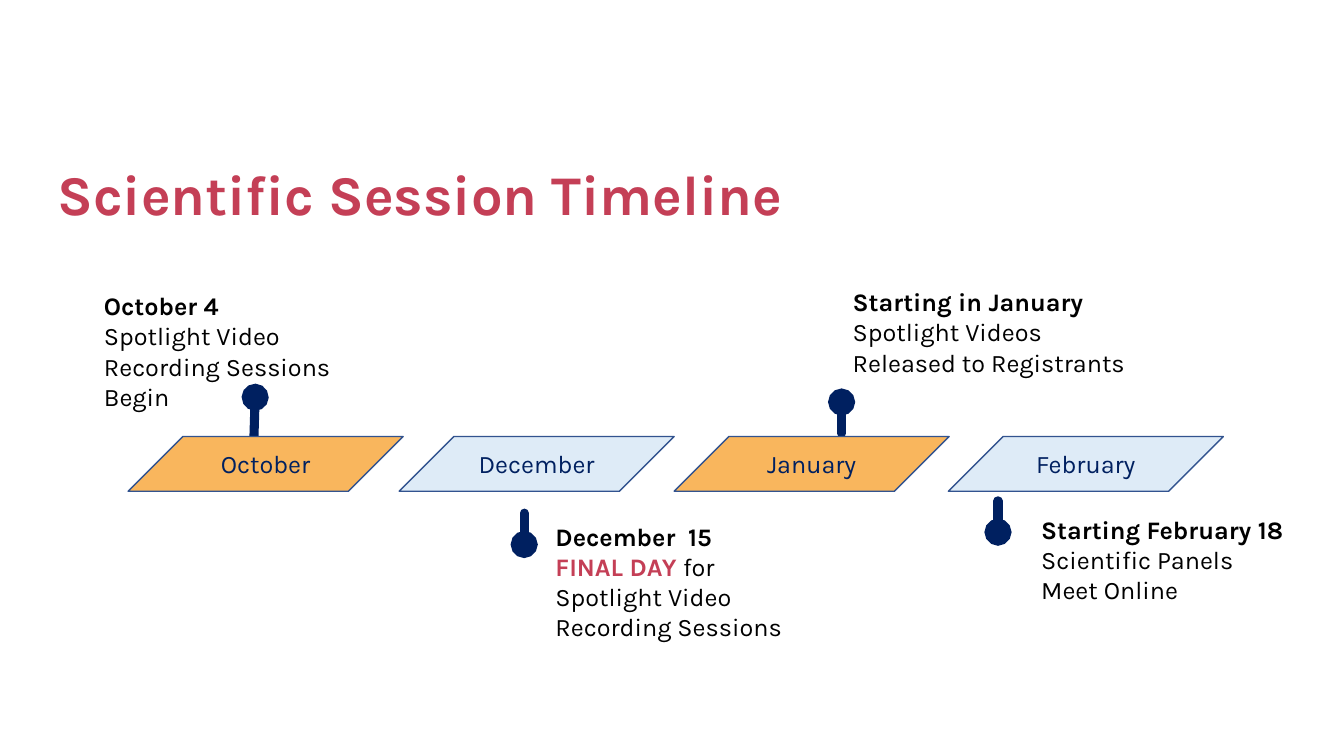
from dataclasses import dataclass

from lxml import etree
from pptx import Presentation
from pptx.dml.color import RGBColor
from pptx.enum.shapes import MSO_CONNECTOR, MSO_SHAPE
from pptx.enum.text import MSO_ANCHOR, MSO_AUTO_SIZE, PP_ALIGN
from pptx.oxml.ns import qn
from pptx.util import Cm, Pt

PARALLELOGRAM = MSO_SHAPE.PARALLELOGRAM
STRAIGHT = MSO_CONNECTOR.STRAIGHT
TOP, MIDDLE = MSO_ANCHOR.TOP, MSO_ANCHOR.MIDDLE
LEFT, CENTER = PP_ALIGN.LEFT, PP_ALIGN.CENTER
GROW, FIXED = MSO_AUTO_SIZE.SHAPE_TO_FIT_TEXT, MSO_AUTO_SIZE.NONE


@dataclass(frozen=True)
class Theme:
    font: str = "Karla"
    title_size: int = 40
    body_size: int = 18
    red: str = "C43F56"
    navy: str = "002060"
    black: str = "000000"
    orange: str = "F9B65D"
    pale_blue: str = "DEEBF7"
    edge: str = "32538F"


@dataclass(frozen=True)
class Milestone:
    """Pin and note places are offsets in cm from the step's top left corner."""
    month: str
    left: float
    fill: str
    pin_start: tuple
    pin_head: tuple
    note_at: tuple
    note_size: tuple
    date: str
    details: tuple
    emphasis: str = ""


THEME = Theme()
STEP_TOP, STEP_WIDTH, STEP_HEIGHT = 11, 6.93, 1.38
MILESTONES = (
    Milestone("October", 3.23, THEME.orange, (3.17, 0), (3.2, -0.99),
              (-0.74, -3.81), (7.54, 3.33), "October 4",
              ("Spotlight Video Recording Sessions Begin",)),
    Milestone("December", 10.06, THEME.pale_blue, (3.15, 1.93), (3.15, 2.72),
              (3.81, 2), (6.93, 3.33), "December  15",
              ("for Spotlight Video Recording Sessions",), "FINAL DAY "),
    Milestone("January", 16.99, THEME.orange, (4.22, -0.08), (4.22, -0.87),
              (4.37, -3.91), (7.54, 2.57), "Starting in January",
              ("Spotlight Videos Released to Registrants",)),
    Milestone("February", 23.9, THEME.pale_blue, (1.25, 1.62), (1.25, 2.41),
              (2.21, 1.83), (6.68, 2.57), "Starting February 18",
              ("Scientific Panels", "Meet Online")),
)


def set_frame(frame, inset, anchor, auto_size):
    frame.word_wrap = True
    frame.auto_size = auto_size
    frame.vertical_anchor = anchor
    frame.margin_left = frame.margin_right = Cm(inset)
    frame.margin_top = frame.margin_bottom = Cm(inset)


def style_run(run, color, bold=False, size=THEME.body_size):
    run.font.name = THEME.font
    run.font.size = Pt(size)
    run.font.bold = bold
    run.font.color.rgb = RGBColor.from_string(color)


def add_title(slide, left, top, width, height):
    title = slide.shapes.title
    title.left, title.top = Cm(left), Cm(top)
    title.width, title.height = Cm(width), Cm(height)
    frame = title.text_frame
    frame.text = "Scientific Session Timeline"
    set_frame(frame, 0.13, TOP, GROW)
    heading = frame.paragraphs[0]
    heading.alignment = LEFT
    heading.line_spacing = 0.9
    style_run(heading.runs[0], THEME.red, True, THEME.title_size)


def add_pin(slide, start, head):
    """Draw a thick round-ended stem with a ball at its head."""
    ends = [Cm(value) for value in (*start, *head)]
    pin = slide.shapes.add_connector(STRAIGHT, *ends)
    pin.line.width = Pt(6.5)
    pin.line.color.rgb = RGBColor.from_string(THEME.navy)
    stroke = pin.get_or_add_ln()
    stroke.set("cap", "rnd")
    etree.SubElement(stroke, qn("a:round"))
    etree.SubElement(stroke, qn("a:tailEnd"), type="oval")
    etree.SubElement(stroke.getparent(), qn("a:effectLst"))


def add_step(slide, left, top, month, fill):
    step = slide.shapes.add_shape(PARALLELOGRAM, Cm(left), Cm(top),
                                  Cm(STEP_WIDTH), Cm(STEP_HEIGHT))
    step.adjustments[0] = 1
    step.shadow.inherit = False
    step.fill.solid()
    step.fill.fore_color.rgb = RGBColor.from_string(fill)
    step.line.width = Pt(1)
    step.line.color.rgb = RGBColor.from_string(THEME.edge)
    frame = step.text_frame
    frame.text = month
    set_frame(frame, 0, MIDDLE, FIXED)
    frame.paragraphs[0].alignment = CENTER
    style_run(frame.paragraphs[0].runs[0], THEME.navy)


def add_note(slide, left, top, width, height, milestone):
    note = slide.shapes.add_textbox(Cm(left), Cm(top), Cm(width), Cm(height))
    frame = note.text_frame
    frame.text = "\n".join((milestone.date, *milestone.details))
    set_frame(frame, 0.13, TOP, GROW)
    date, *details = frame.paragraphs
    style_run(date.runs[0], THEME.black, True)
    if milestone.emphasis:
        details[0].text = milestone.emphasis
        details[0].add_run().text = milestone.details[0]
    for detail in details:
        for run in detail.runs:
            strong = run.text == milestone.emphasis
            style_run(run, THEME.red if strong else THEME.black, strong)


def add_milestone(slide, left, top, milestone):
    def from_step(offset):
        return left + offset[0], top + offset[1]

    add_pin(slide, from_step(milestone.pin_start), from_step(milestone.pin_head))
    add_step(slide, left, top, milestone.month, milestone.fill)
    add_note(slide, *from_step(milestone.note_at), *milestone.note_size, milestone)


def main():
    deck = Presentation()
    deck.slide_width, deck.slide_height = Cm(33.87), Cm(19.05)
    slide = deck.slides.add_slide(deck.slide_layouts.get_by_name("Title Only"))
    add_title(slide, 1.32, 4.09, 30.66, 1.8)
    for milestone in MILESTONES:
        add_milestone(slide, milestone.left, STEP_TOP, milestone)
    deck.save("out.pptx")


if __name__ == "__main__":
    main()
